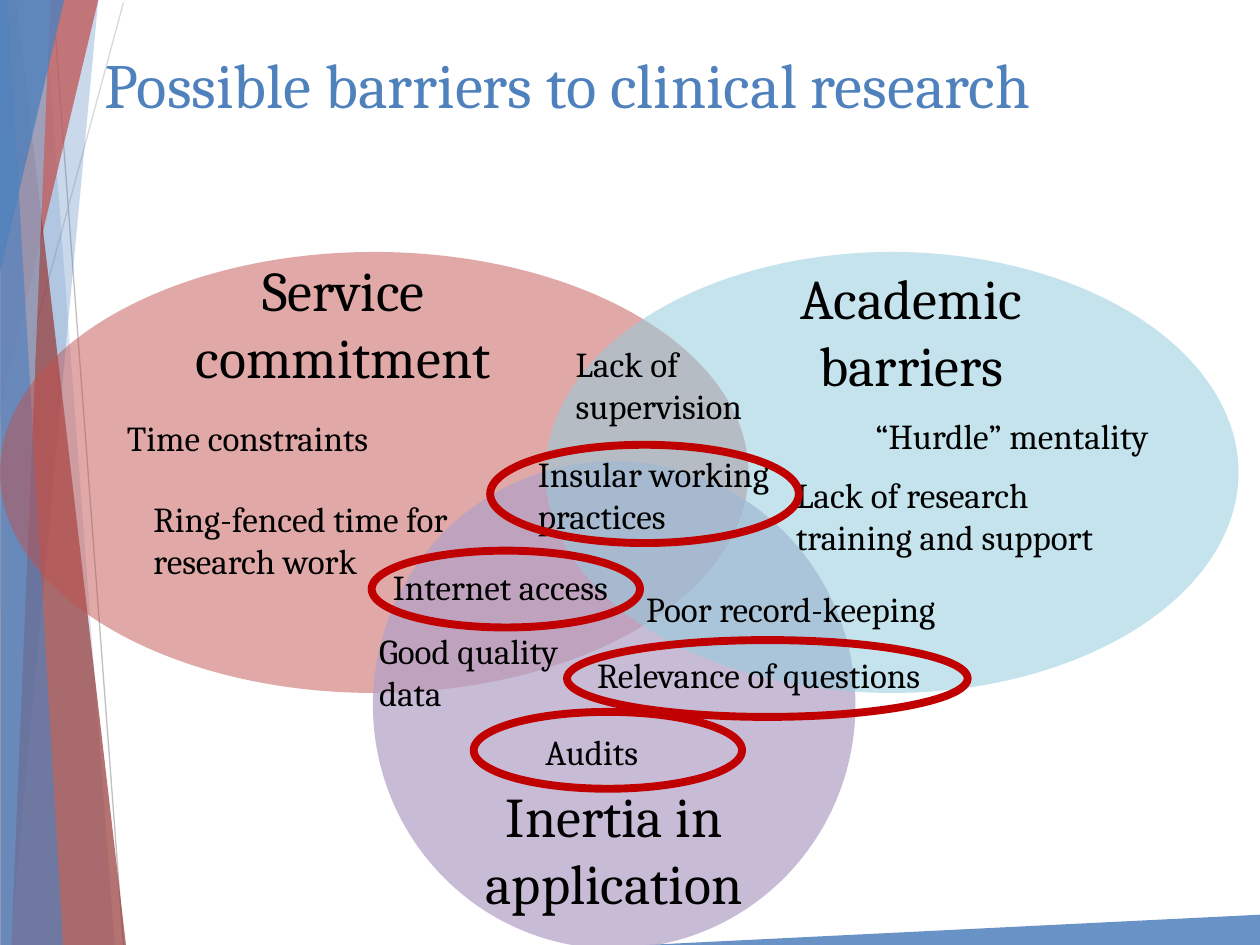
from typing import NamedTuple

import pptx
import pptx.dml.color
import pptx.enum.shapes
import pptx.enum.text
import pptx.oxml
import pptx.oxml.ns
import pptx.util
from pptx.util import Inches

FONT = "Cambria"
COLORS = {
    "blue": "4F81BD", "pale": "95B3D7", "red": "C0504D", "dark": "953735",
    "plum": "B3A2C7", "aqua": "93CDDD", "ring": "C00000", "black": "000000",
    "light": "D9D9D9", "gray": "BFBFBF",
}


class Box(NamedTuple):
    left: float
    top: float
    width: float
    height: float


class Line(NamedTuple):
    start: tuple
    end: tuple
    color: str


class Facet(NamedTuple):
    points: list
    color: str
    alpha: int


class Circle(NamedTuple):
    box: Box
    color: str
    alpha: int
    head: str
    spot: Box


class Label(NamedTuple):
    text: str
    box: Box


LINES = [
    Line((0.98, 0.02), (0.01, 3.61), "light"),
    Line((0.98, 7.5), (0.42, 0.01), "gray"),
]
FACETS = [
    Facet([(0.08, 7.5), (0.78, 0), (0, 0), (0, 7.5)], "blue", 30),
    Facet([(0.91, 7.5), (0.35, 0), (0, 0), (0, 7.5)], "blue", 20),
    Facet([(0.78, 0), (0.01, 3.22), (0, 0)], "red", 72),
    Facet([(1, 7.5), (0.13, 0), (0, 0), (0, 7.5)], "dark", 70),
    Facet([(0.09, 7.5), (0.4, 0), (0, 0), (0, 7.5)], "pale", 70),
    Facet([(0.5, 7.5), (0.06, 0), (0, 0), (0.01, 7.5)], "blue", 65),
    Facet([(0.51, 0), (0, 2.16), (0, 0)], "blue", 80),
    Facet([(5.13, 7.5), (10, 7.26), (10, 7.5)], "blue", 85),
]
# The facets above colour the left edge and the lower right corner.
CIRCLES = [
    Circle(Box(0, 2, 5.94, 3.5), "red", 49,
           "Service commitment", Box(1.19, 1.98, 3.07, 1.18)),
    Circle(Box(2.96, 3.66, 3.83, 3.87), "plum", 73,
           "Inertia in application", Box(3.45, 6.15, 2.85, 1.18)),
    Circle(Box(4.33, 2, 5.5, 3.5), "aqua", 54,
           "Academic barriers", Box(5.56, 2.04, 3.35, 1.18)),
]
LABELS = [
    Label("Good quality data", Box(2.91, 4.95, 1.85, 0.77)),
    Label("Ring-fenced time for research work", Box(1.12, 3.9, 3.07, 0.77)),
    Label("Insular working practices", Box(4.17, 3.54, 2.13, 0.77)),
    Label("Relevance of questions", Box(4.64, 5.14, 3.07, 0.44)),
    Label("“Hurdle” mentality", Box(6.85, 3.24, 2.47, 0.44)),
    Label("Time constraints", Box(0.91, 3.26, 3.07, 0.44)),
    Label("Audits", Box(4.23, 5.75, 1, 0.44)),
    Label("Internet access", Box(3.02, 4.44, 2.08, 0.44)),
    Label("Lack of research training and support", Box(6.22, 3.71, 2.76, 0.77)),
    Label("Poor record-keeping", Box(5.03, 4.61, 3.07, 0.44)),
    Label("Lack of supervision", Box(4.47, 2.67, 1.89, 0.77)),
]
RINGS = [
    Box(3.76, 5.65, 2.13, 0.61),
    Box(3.89, 3.53, 2.45, 0.78),
    Box(2.95, 4.37, 2.13, 0.61),
    Box(4.5, 5.08, 3.18, 0.61),
]


def rgb(name: str):
    return pptx.dml.color.RGBColor.from_string(COLORS[name])


def span(box: Box) -> list:
    return [Inches(size) for size in box]


def tint(shape, color: str, alpha: int) -> None:
    """Give a shape a see-through fill, no line and no shadow."""
    shape.shadow.inherit = False
    shape.line.fill.background()
    shape.fill.solid()
    shape.fill.fore_color.rgb = rgb(color)
    node = shape.fill.fore_color._xFill.find(pptx.oxml.ns.qn("a:srgbClr"))
    node.append(pptx.oxml.parse_xml(
        f'<a:alpha {pptx.oxml.ns.nsdecls("a")} val="{alpha * 1000}"/>'))


def write(shape, text: str, size: int = 20, color: str = "black",
          center: bool = False) -> None:
    frame = shape.text_frame
    frame.word_wrap = True
    frame.vertical_anchor = pptx.enum.text.MSO_ANCHOR.TOP
    frame.text = text
    para = frame.paragraphs[0]
    align = pptx.enum.text.PP_ALIGN
    para.alignment = align.CENTER if center else align.LEFT
    font = para.runs[0].font
    font.name, font.size = FONT, pptx.util.Pt(size)
    font.color.rgb = rgb(color)


def add_line(shapes, line: Line) -> None:
    rule = shapes.add_connector(
        pptx.enum.shapes.MSO_CONNECTOR.STRAIGHT,
        *map(Inches, line.start + line.end))
    rule.line.width = pptx.util.Pt(0.75)
    rule.line.color.rgb = rgb(line.color)
    rule._element.spPr.append(pptx.oxml.parse_xml(
        f'<a:effectLst {pptx.oxml.ns.nsdecls("a")}/>'))


def add_facet(shapes, facet: Facet) -> None:
    first, *rest = [(Inches(x), Inches(y)) for x, y in facet.points]
    pen = shapes.build_freeform(*first)
    pen.add_line_segments(rest)
    tint(pen.convert_to_shape(), facet.color, facet.alpha)


def add_oval(shapes, box: Box):
    return shapes.add_shape(pptx.enum.shapes.MSO_SHAPE.OVAL, *span(box))


def add_circle(shapes, circle: Circle) -> None:
    tint(add_oval(shapes, circle.box), circle.color, circle.alpha)
    head = shapes.add_textbox(*span(circle.spot))
    write(head, circle.head, size=32, center=True)


def add_ring(shapes, box: Box) -> None:
    ring = add_oval(shapes, box)
    ring.shadow.inherit = False
    ring.fill.background()
    ring.line.color.rgb = rgb("ring")
    ring.line.width = pptx.util.Pt(4.5)


def main() -> None:
    deck = pptx.Presentation()
    deck.slide_width, deck.slide_height = Inches(10), Inches(7.5)
    slide = deck.slides.add_slide(deck.slide_layouts[5])
    shapes = slide.shapes
    title = shapes.title
    title.left, title.top, title.width, title.height = span(
        Box(0.73, 0.31, 8.75, 1.25))
    write(title, "Possible barriers to clinical research", size=36, color="blue")
    for line in LINES:
        add_line(shapes, line)
    for facet in FACETS:
        add_facet(shapes, facet)
    for circle in CIRCLES:
        add_circle(shapes, circle)
    for label in LABELS:
        write(shapes.add_textbox(*span(label.box)), label.text)
    for box in RINGS:
        add_ring(shapes, box)
    deck.save("out.pptx")


if __name__ == "__main__":
    main()
